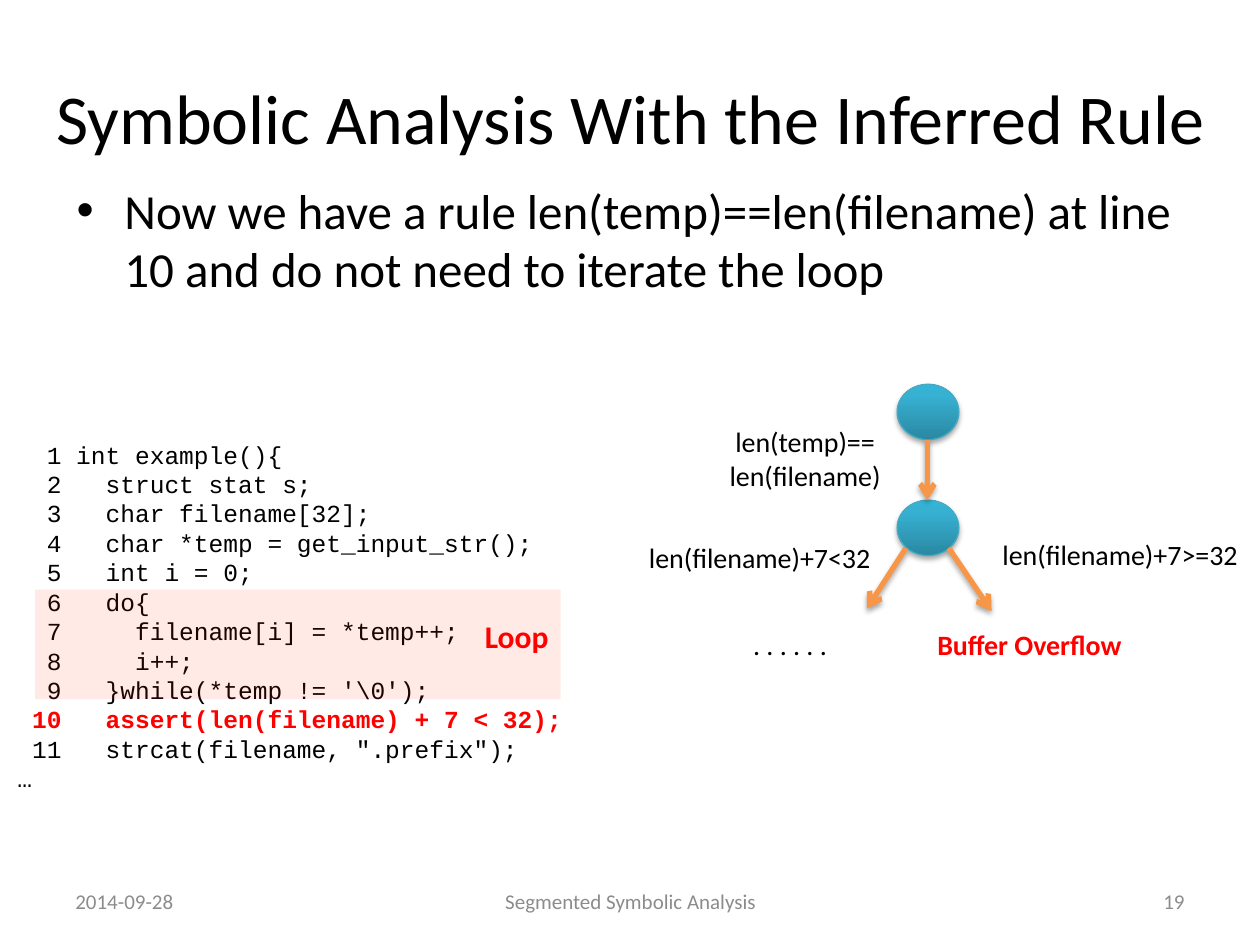
from dataclasses import dataclass

from lxml.etree import SubElement
from pptx import Presentation
from pptx.dml.color import RGBColor
from pptx.enum.shapes import MSO_CONNECTOR, MSO_SHAPE
from pptx.enum.text import MSO_ANCHOR, PP_ALIGN
from pptx.oxml import parse_xml
from pptx.oxml.ns import nsdecls, qn
from pptx.util import Inches, Pt

BLACK, RED, GREY = "000000", "FF0000", "8C8C8C"
ORANGE, TEAL_EDGE, LOOP_TINT = "F79646", "46AAC5", "FF3300"
NODE_STOPS = [(0, "2A88A2"), (80, "37B1D2"), (100, "34B4D6")]
LEFT, CENTER, RIGHT = PP_ALIGN.LEFT, PP_ALIGN.CENTER, PP_ALIGN.RIGHT


@dataclass
class Label:
    lines: list[str]
    box: tuple[float, float, float, float]
    size: float = 16
    color: str = BLACK
    bold: bool = False
    align: PP_ALIGN = CENTER
    anchor: MSO_ANCHOR = MSO_ANCHOR.TOP
    font: str = "Calibri"


@dataclass
class Arrow:
    start: tuple[float, float]
    end: tuple[float, float]


def rgb(hex_color: str) -> RGBColor:
    return RGBColor.from_string(hex_color)


def apply(target, values: dict) -> None:
    for attribute, value in values.items():
        setattr(target, attribute, value)


def draw_label(slide, label: Label):
    frame = slide.shapes.add_textbox(*map(Inches, label.box)).text_frame
    apply(frame, {"word_wrap": True, "vertical_anchor": label.anchor})
    frame.text = "\n".join(label.lines)
    for paragraph in frame.paragraphs:
        paragraph.alignment = label.align
        for run in paragraph.runs:
            apply(run.font, {"size": Pt(label.size), "name": label.font, "bold": label.bold})
            run.font.color.rgb = rgb(label.color)
    return frame


def add_shadow(shape) -> None:
    shape._element.spPr.append(parse_xml(
        f'<a:effectLst {nsdecls("a")}><a:outerShdw blurRad="{Pt(3.1)}" dist="{Pt(1.8)}" '
        f'dir="5400000" rotWithShape="0"><a:srgbClr val="{BLACK}">'
        '<a:alpha val="35000"/></a:srgbClr></a:outerShdw></a:effectLst>'))


def draw_node(slide, top: float) -> None:
    node = slide.shapes.add_shape(
        MSO_SHAPE.OVAL, *map(Inches, (7.12, top, 0.49, 0.44)))
    stops = "".join(f'<a:gs pos="{position * 1000}"><a:srgbClr val="{color}"/></a:gs>'
                    for position, color in NODE_STOPS)
    gradient = parse_xml(
        f'<a:gradFill {nsdecls("a")} rotWithShape="1"><a:gsLst>{stops}</a:gsLst>'
        '<a:lin ang="16200000" scaled="0"/></a:gradFill>')
    node._element.spPr.find(qn("a:prstGeom")).addnext(gradient)
    node.line.color.rgb = rgb(TEAL_EDGE)
    node.line.width = Pt(0.75)
    add_shadow(node)


def draw_arrow(slide, arrow: Arrow) -> None:
    edge = slide.shapes.add_connector(
        MSO_CONNECTOR.STRAIGHT, *map(Inches, arrow.start + arrow.end))
    edge.line.color.rgb = rgb(ORANGE)
    edge.line.width = Pt(3)
    SubElement(edge.line._ln, qn("a:tailEnd"), type="arrow")
    add_shadow(edge)


def draw_rule(slide) -> None:
    rule = draw_label(slide, Label(
        ["Now we have a rule len(temp)==len(filename) at line 10 "
         "and do not need to iterate the loop"],
        (0.51, 1.38, 9, 4.95), size=28, align=LEFT)).paragraphs[0]
    rule.space_before = Pt(5.6)
    properties = rule._p.get_or_add_pPr()
    properties.set("marL", str(Inches(0.38)))
    properties.set("indent", str(-Inches(0.38)))
    SubElement(properties, qn("a:buFont"), typeface="Arial")
    SubElement(properties, qn("a:buChar"), char="•")


def draw_code(slide) -> None:
    source = [
        "int example(){",
        "  struct stat s;",
        "  char filename[32];",
        "  char *temp = get_input_str();",
        "  int i = 0;",
        "  do{",
        "    filename[i] = *temp++;",
        "    i++;",
        "  }while(*temp != '\\0');",
        "  assert(len(filename) + 7 < 32);",
        '  strcat(filename, ".prefix");',
    ]
    numbered = [f"{number:>3} {line}" for number, line in enumerate(source, 1)]
    listing = draw_label(slide, Label(
        numbered + ["…"], (0.04, 3.44, 4.8, 2.93), size=14, align=LEFT, font="Courier New"))
    for paragraph in listing.paragraphs:
        paragraph.line_spacing = Pt(16.8)
    assertion = listing.paragraphs[9].runs[0].font
    assertion.bold = True
    assertion.color.rgb = rgb(RED)


def draw_loop_highlight(slide) -> None:
    loop = slide.shapes.add_shape(
        MSO_SHAPE.RECTANGLE, *map(Inches, (0.28, 4.68, 4.17, 0.87)))
    loop.shadow.inherit = False
    loop.line.fill.background()
    loop.fill.solid()
    loop.fill.fore_color.rgb = rgb(LOOP_TINT)
    tint = loop._element.spPr.find(qn("a:solidFill"))[0]
    SubElement(tint, qn("a:alpha"), val="10000")


def main() -> None:
    deck = Presentation()
    apply(deck, {"slide_width": Inches(10), "slide_height": Inches(7.5)})
    slide = deck.slides.add_slide(deck.slide_layouts[6])

    draw_label(slide, Label(["Symbolic Analysis With the Inferred Rule"],
                            (0.28, 0.3, 9.45, 1.25), size=40, anchor=MSO_ANCHOR.MIDDLE))
    draw_rule(slide)
    for footer, left, width, align in [
        ("2014-09-28", 0.5, 2.33, LEFT),
        ("Segmented Symbolic Analysis", 3.42, 3.17, CENTER),
        ("19", 7.17, 2.33, RIGHT),
    ]:
        draw_label(slide, Label([footer], (left, 6.95, width, 0.4), size=12, color=GREY,
                                align=align, anchor=MSO_ANCHOR.MIDDLE))
    draw_code(slide)

    for top in (3.05, 3.97):
        draw_node(slide, top)
    for arrow in [
        Arrow((7.36, 3.49), (7.36, 3.97)),
        Arrow((7.19, 4.35), (6.88, 4.83)),
        Arrow((7.53, 4.35), (7.87, 4.85)),
    ]:
        draw_arrow(slide, arrow)

    draw_loop_highlight(slide)
    for label in [
        Label(["len(temp)==", "len(filename)"], (5.47, 3.32, 1.84, 0.64)),
        Label(["len(filename)+7<32"], (4.71, 4.24, 2.64, 0.37)),
        Label(["len(filename)+7>=32"], (7.82, 4.22, 2.14, 0.37)),
        Label([". . . . . ."], (5.35, 4.93, 1.84, 0.37)),
        Label(["Buffer Overflow"], (7.28, 4.93, 1.78, 0.37), color=RED, bold=True),
        Label(["Loop"], (3.75, 4.85, 0.9, 0.4), size=18, color=RED, bold=True, align=LEFT),
    ]:
        draw_label(slide, label)

    deck.save("out.pptx")


if __name__ == "__main__":
    main()
